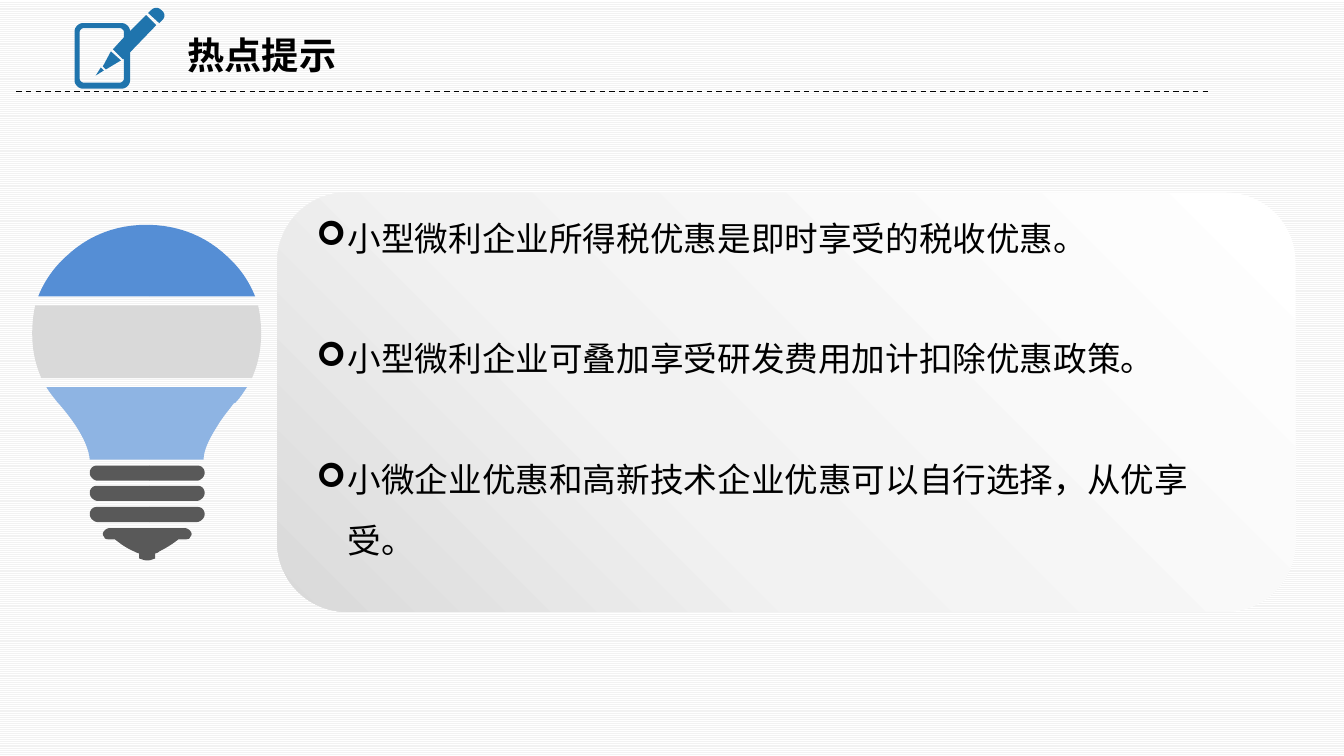
from copy import deepcopy
from dataclasses import dataclass

from lxml import etree
from pptx import Presentation
from pptx import util as u
from pptx.dml.color import RGBColor
from pptx.enum import dml, shapes, text
from pptx.oxml import ns

PX = 9144
CURVE_STEPS = 12
FONT = "Noto Sans CJK SC"
BLACK = RGBColor(0x00, 0x00, 0x00)
WHITE = RGBColor(0xFF, 0xFF, 0xFF)
PALE = RGBColor(0xF2, 0xF2, 0xF2)
SILVER = RGBColor(0xD9, 0xD9, 0xD9)
BLUE = RGBColor(0x55, 0x8E, 0xD5)
LIGHT_BLUE = RGBColor(0x8E, 0xB4, 0xE3)
GREY = RGBColor(0x59, 0x59, 0x59)
ICON_BLUE = RGBColor(0x1F, 0x74, 0xAD)

Outline = list[tuple[int, ...]]


@dataclass
class Piece:
    """A filled form; a pair of numbers is a corner, six numbers are a curve."""
    color: RGBColor
    outlines: list[Outline]


def thread(edge: int, side: int, top: int) -> Outline:
    """Return half a socket thread, rounded at its outer edge."""
    x = [edge + side * step for step in range(9)]
    return [(148, top), (148, top + 15), (x[8], top + 15),
            (x[6], top + 15, x[4], top + 14, x[2], top + 12),
            (x[1], top + 11, x[0], top + 9, x[0], top + 7),
            (x[0], top + 5, x[1], top + 3, x[2], top + 2),
            (x[4], top, x[6], top, x[8], top)]


def frame(left: int, top: int, right: int, bottom: int, radius: int,
          notch: Outline) -> Outline:
    """Return a rounded frame whose right side follows the notch."""
    bend = radius // 2
    return [(left + radius, top), (right - radius, top),
            (right - bend, top, right, top + bend, right, top + radius),
            *notch, (right, bottom - radius),
            (right, bottom - bend, right - bend, bottom, right - radius, bottom),
            (left + radius, bottom),
            (left + bend, bottom, left, bottom - bend, left, bottom - radius),
            (left, top + radius),
            (left, top + bend, left + bend, top, left + radius, top)]


THREAD_TOPS = (462, 482, 503)
BULB = [
    Piece(BLUE, [[(226, 255), (238, 266, 247, 279, 253, 294), (148, 294),
                  (148, 223), (178, 224, 204, 234, 226, 255)]]),
    Piece(GREY, [[(188, 526), (189, 527, 190, 528, 190, 530),
                  (190, 531, 189, 532, 188, 534), (187, 535, 185, 535, 184, 535),
                  (177, 535), (172, 539, 166, 543, 158, 547),
                  (157, 548, 155, 549, 154, 549), (154, 554),
                  (151, 555, 149, 556, 146, 556), (144, 556, 141, 555, 138, 554),
                  (138, 549), (137, 549, 135, 548, 133, 547),
                  (126, 544, 120, 540, 114, 535), (108, 535),
                  (107, 535, 105, 535, 104, 534), (103, 532, 102, 531, 102, 530),
                  (102, 528, 103, 527, 104, 526), (105, 525, 107, 524, 108, 524),
                  (184, 524), (185, 524, 187, 525, 188, 526)]]),
    Piece(GREY, [thread(89, 1, top) for top in THREAD_TOPS]),
    Piece(GREY, [thread(203, -1, top) for top in THREAD_TOPS]),
    Piece(BLUE, [[(146, 223), (148, 223), (148, 294), (38, 294),
                  (44, 279, 53, 266, 65, 255), (87, 234, 114, 223, 146, 223)]]),
    Piece(SILVER, [[(148, 375), (148, 303), (256, 303),
                    (258, 312, 259, 321, 259, 331), (259, 347, 256, 361, 250, 375)]]),
    Piece(SILVER, [[(148, 375), (41, 375), (35, 361, 32, 347, 32, 331),
                    (32, 321, 33, 312, 35, 303), (148, 303)]]),
    Piece(LIGHT_BLUE, [[(148, 384), (148, 456), (89, 456),
                        (88, 442, 78, 423, 58, 400), (57, 399),
                        (53, 394, 49, 389, 46, 384)]]),
    Piece(LIGHT_BLUE, [[(148, 384), (245, 384), (241, 390, 238, 395, 233, 400),
                        (232, 400), (226, 408, 220, 415, 216, 422),
                        (207, 436, 202, 447, 202, 456), (148, 456)]]),
]
NOTEPAD = Piece(ICON_BLUE, [
    [(100, 67), (103, 70), (95, 75)],
    [(110, 51), (120, 60), (105, 69), (102, 66)],
    frame(79, 28, 123, 82, 4, [(123, 37), (112, 49), (122, 59), (123, 58)]),
    frame(74, 23, 129, 88, 8, [(145, 15), (155, 25), (129, 52)]),
    [(158, 23), (147, 13), (150, 10), (153, 7, 157, 7, 160, 10),
     (164, 13, 164, 17, 161, 20)],
])
TIPS = ("小型微利企业所得税优惠是即时享受的税收优惠。",
        "小型微利企业可叠加享受研发费用加计扣除优惠政策。",
        "小微企业优惠和高新技术企业优惠可以自行选择，从优享受。")


def px(*lengths: float) -> list[u.Emu]:
    """Turn px into EMU."""
    return [u.Emu(round(length * PX)) for length in lengths]


def trace(outline: Outline) -> list[tuple[float, float]]:
    """Turn corners and curves into a chain of points."""
    points = [outline[0]]
    for step in outline[1:]:
        if len(step) == 2:
            points.append(step)
            continue
        controls = [points[-1], step[:2], step[2:4], step[4:]]
        for count in range(1, CURVE_STEPS + 1):
            t = count / CURVE_STEPS
            weights = ((1 - t) ** 3, 3 * t * (1 - t) ** 2, 3 * t * t * (1 - t), t ** 3)
            points.append(tuple(sum(w * c[axis] for w, c in zip(weights, controls))
                                for axis in (0, 1)))
    return points


def draw_piece(canvas, piece: Piece) -> None:
    """Draw all outlines of a piece as one freeform."""
    chains = [[px(*point) for point in trace(outline)] for outline in piece.outlines]
    builder = canvas.build_freeform(*chains[0][0], scale=1.0)
    for index, chain in enumerate(chains):
        if index:
            builder.move_to(*chain[0])
        builder.add_line_segments(chain[1:], close=True)
    form = builder.convert_to_shape()
    form.shadow.inherit = False
    form.fill.solid()
    form.fill.fore_color.rgb = piece.color
    form.line.fill.background()


def draw_panel(page) -> None:
    """Draw the rounded panel with its three-stop gradient."""
    panel = page.shapes.add_shape(shapes.MSO_SHAPE.ROUNDED_RECTANGLE,
                                  *px(275, 191, 1010, 416))
    panel.shadow.inherit = False
    panel.line.fill.background()
    panel.fill.gradient()
    panel.fill.gradient_angle = 225
    stops = panel._element.find(".//" + ns.qn("a:gsLst"))
    stops.append(deepcopy(stops[0]))
    blend = ((0, WHITE), (0.62, PALE), (1, SILVER))
    for stop, (position, color) in zip(panel.fill.gradient_stops, blend):
        stop.position = position
        stop.color.rgb = color


def draw_rule(page) -> None:
    """Draw the dashed rule under the title."""
    rule = page.shapes.add_connector(shapes.MSO_CONNECTOR.STRAIGHT,
                                     *px(16, 91, 1199, 91))
    rule.line.color.rgb = BLACK
    rule.line.width = u.Pt(1)
    rule.line.dash_style = dml.MSO_LINE.DASH
    etree.SubElement(rule._element.spPr, ns.qn("a:effectLst"))


def add_box(page, place: tuple[int, int, int, int], wrap: bool):
    """Add a text box that grows with its text."""
    box = page.shapes.add_textbox(*px(*place))
    box.text_frame.word_wrap = wrap
    box.text_frame.auto_size = text.MSO_AUTO_SIZE.SHAPE_TO_FIT_TEXT
    return box


def add_span(para, words: str, size: float, bold: bool = False) -> None:
    """Add a run in the slide's font, for Latin and East Asian text."""
    span = para.add_run()
    span.text = words
    span.font.size = u.Pt(size)
    span.font.bold = bold
    span.font.color.rgb = BLACK
    span.font.name = FONT
    etree.SubElement(span.font._element, ns.qn("a:ea"), typeface=FONT)


def draw_tips(page) -> None:
    """Write the bulleted tips."""
    frame_of_tips = add_box(page, (304, 191, 912, 373), True).text_frame
    for index, tip in enumerate(TIPS):
        para = frame_of_tips.add_paragraph() if index else frame_of_tips.paragraphs[0]
        para.line_spacing = 1.5
        if index:
            para.space_before = u.Pt(43)
        settings = para._p.get_or_add_pPr()
        settings.set("marL", str(31 * PX))
        settings.set("indent", str(-31 * PX))
        etree.SubElement(settings, ns.qn("a:buFont"), typeface="Wingdings")
        etree.SubElement(settings, ns.qn("a:buChar"), char="➢")
        add_span(para, tip, 24)


def main() -> None:
    """Build the slide and save it."""
    deck = Presentation()
    deck.slide_width, deck.slide_height = px(1333, 750)
    page = deck.slides.add_slide(deck.slide_layouts[6])
    backdrop = page.background.fill
    backdrop.patterned()
    backdrop.pattern = dml.MSO_PATTERN.NARROW_HORIZONTAL
    backdrop.fore_color.rgb = PALE
    backdrop.back_color.rgb = WHITE
    draw_panel(page)
    title = add_box(page, (176, 27, 168, 55), False)
    add_span(title.text_frame.paragraphs[0], "热点提示", 26.6, True)
    draw_rule(page)
    draw_tips(page)
    bulb = page.shapes.add_group_shape()
    for piece in BULB:
        draw_piece(bulb.shapes, piece)
    draw_piece(page.shapes, NOTEPAD)
    deck.save("out.pptx")


if __name__ == "__main__":
    main()
